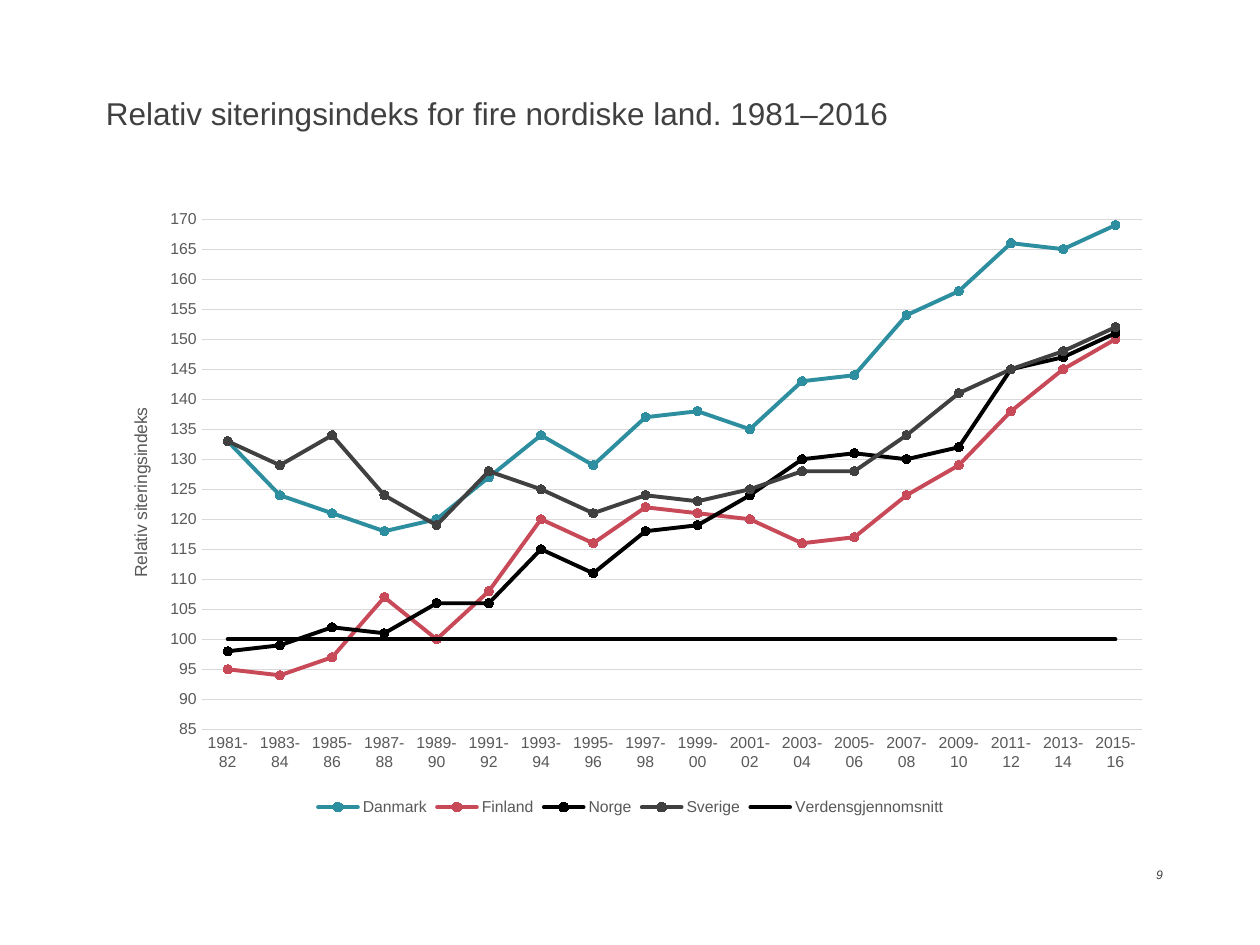
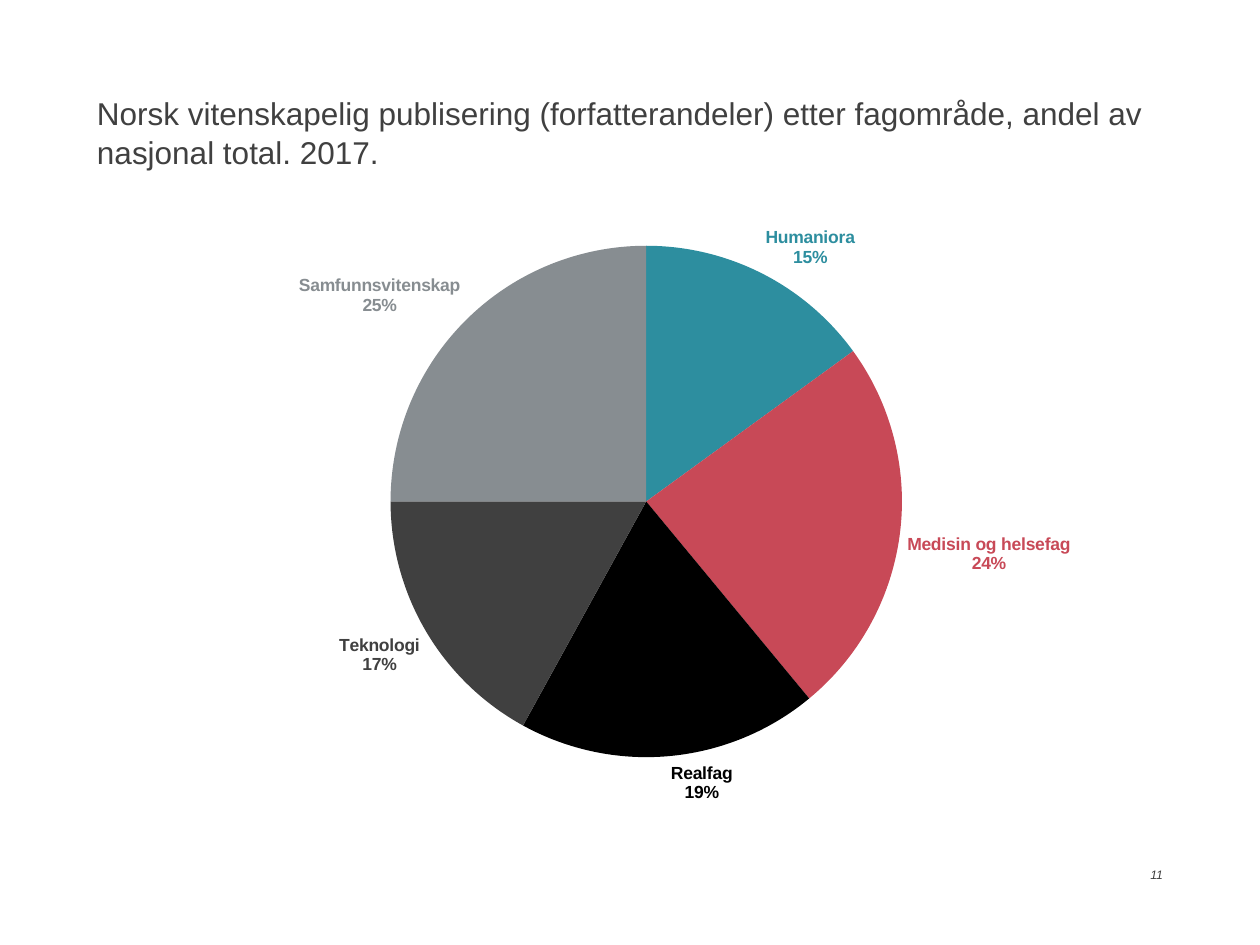
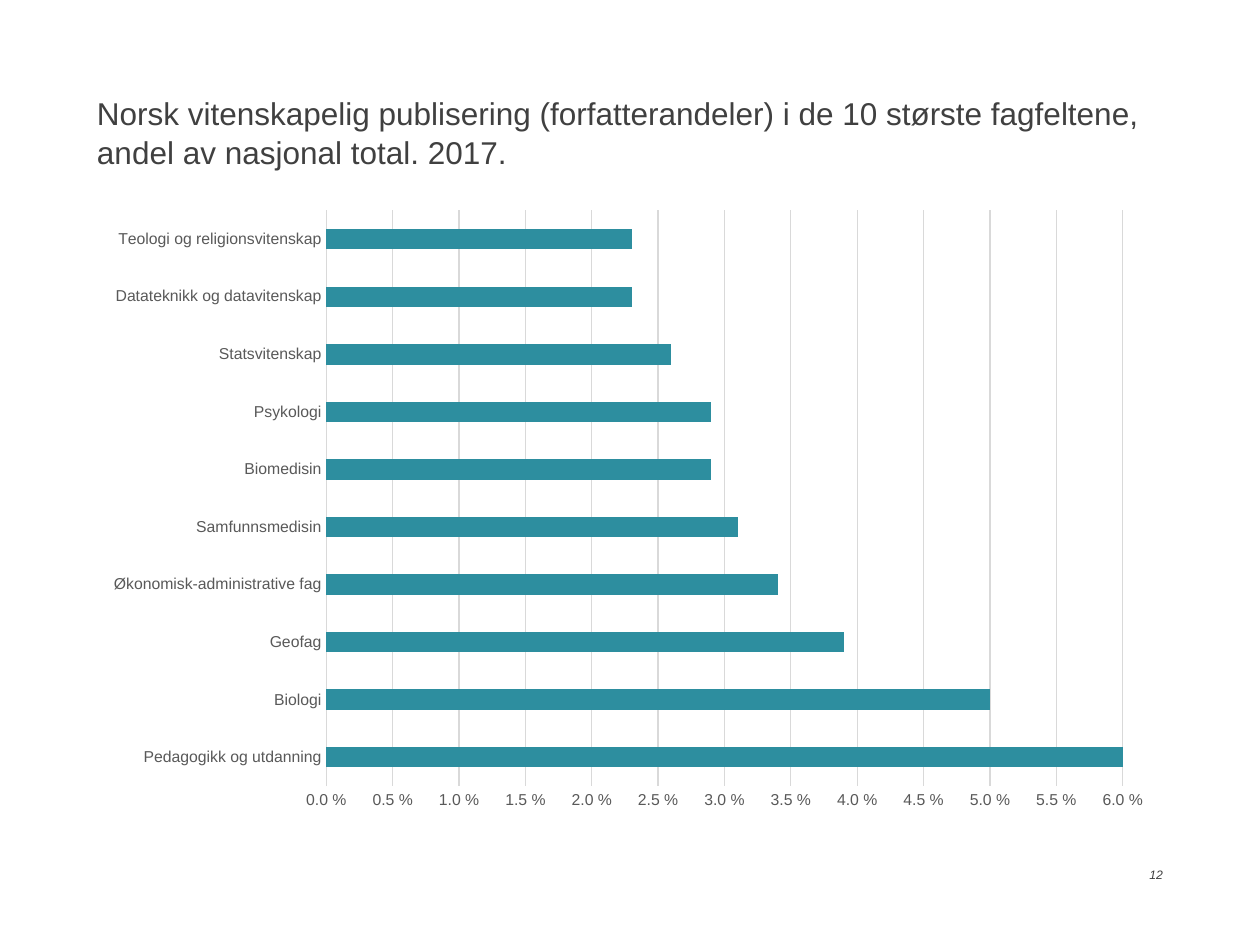
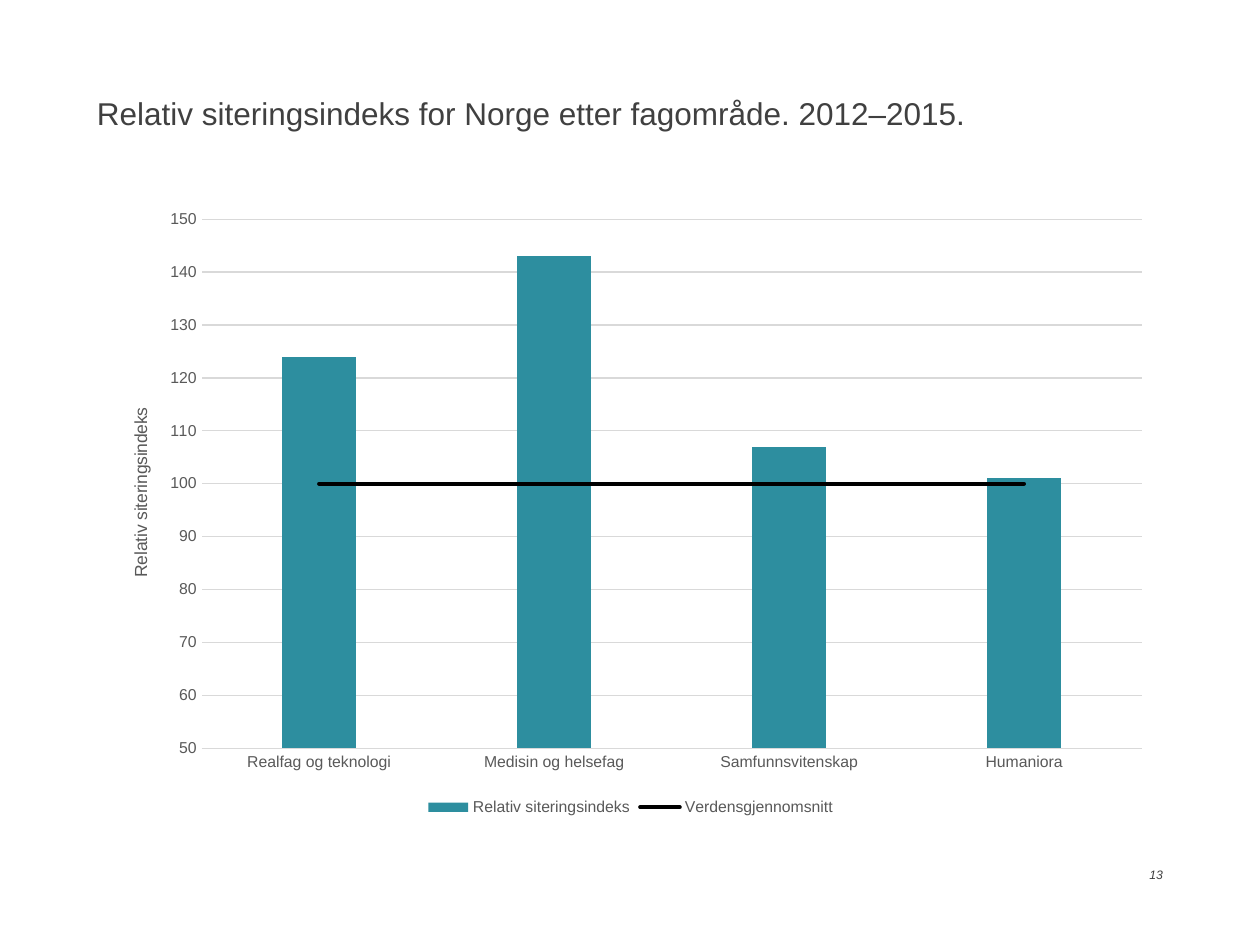
from lxml import etree
from pptx import Presentation
from pptx.chart.data import CategoryChartData
from pptx.dml.color import RGBColor
from pptx.enum import chart as ch, text as tx
from pptx.oxml import ns, xmlchemy as xc
from pptx.util import Inches, Pt

FONT = "Arial"
TEAL, RED, BLACK, DARK, GREY = "2D8E9F", "C84957", "000000", "404040", "878D91"
LABEL, GRID = "595959", "D9D9D9"
FRAME = (0.77, 1.57, 8.47, 4.95)
INDEX = "Relativ siteringsindeks"
WORLD = "Verdensgjennomsnitt"


def rgb(code):
    return RGBColor.from_string(code)


def style(font, size, color, bold=False, italic=False):
    font.name, font.size = FONT, Pt(size)
    font.bold, font.italic = bold, italic
    font.color.rgb = rgb(color)


def child(host, tag, **attrs):
    return etree.SubElement(host, ns.qn(tag), attrs)


def add_text(slide, box, words, size, italic=False):
    shape = slide.shapes.add_textbox(*map(Inches, box))
    frame = shape.text_frame
    frame.word_wrap = True
    frame.margin_left = frame.margin_right = 0
    frame.margin_top = frame.margin_bottom = 0
    para = frame.paragraphs[0]
    para.text = words
    style(para.font, size, DARK, italic=italic)
    return frame


def add_slide(deck, title, number, indent=0):
    slide = deck.slides.add_slide(deck.slide_layouts[6])
    head = add_text(slide, (0.77, 0.73, 8.46, 0.4), title, 18)
    head.margin_left = Inches(indent)
    head.paragraphs[0].line_spacing = 1.05
    foot = add_text(slide, (8.86, 6.88, 0.37, 0.12), str(number), 7, italic=True)
    foot.vertical_anchor = tx.MSO_ANCHOR.MIDDLE
    foot.auto_size = tx.MSO_AUTO_SIZE.SHAPE_TO_FIT_TEXT
    foot.paragraphs[0].alignment = tx.PP_ALIGN.RIGHT
    return slide


def place(host, spot, index):
    """Pin a chart part at slide inches: left, top and, if given, width, height."""
    for old in host.findall(ns.qn("c:layout")):
        host.remove(old)
    layout = xc.OxmlElement("c:layout")
    host.insert(index, layout)
    manual = child(layout, "c:manualLayout")
    sized = len(spot) == 4
    if sized:
        child(manual, "c:layoutTarget", val="inner")
    for axis in "xy":
        child(manual, f"c:{axis}Mode", val="edge")
    left, top, width, height = FRAME
    shares = [(spot[0] - left) / width, (spot[1] - top) / height]
    if sized:
        shares += [spot[2] / width, spot[3] / height]
    for key, share in zip("xywh", shares):
        child(manual, f"c:{key}", val=f"{share:.4f}")


def add_chart(slide, kind, cats, series, plot):
    data = CategoryChartData()
    data.categories = cats
    for name, vals in series:
        data.add_series(name, vals)
    chart = slide.shapes.add_chart(kind, *map(Inches, FRAME), data).chart
    chart.has_title = chart.has_legend = False
    style(chart.font, 10, BLACK)
    place(chart._chartSpace.chart.plotArea, plot, 0)
    return chart


def set_axes(chart, low, high, step, title=None):
    cat, val = chart.category_axis, chart.value_axis
    for axis in (cat, val):
        axis.major_tick_mark = axis.minor_tick_mark = ch.XL_TICK_MARK.NONE
        style(axis.tick_labels.font, 9, LABEL)
    cat.has_major_gridlines = False
    val.has_major_gridlines = True
    for line in (cat.format.line, val.major_gridlines.format.line):
        line.color.rgb, line.width = rgb(GRID), Pt(0.75)
    val.format.line.fill.background()
    val.minimum_scale, val.maximum_scale, val.major_unit = low, high, step
    if title:
        frame = val.axis_title.text_frame
        frame.text = title
        style(frame.paragraphs[0].font, 10, LABEL)
        place(val.axis_title._element, (1, 3.21), 1)


def add_legend(chart):
    chart.has_legend = True
    chart.legend.position = ch.XL_LEGEND_POSITION.BOTTOM
    chart.legend.include_in_layout = False
    style(chart.legend.font, 9, LABEL)


def fill(part, color):
    part.format.fill.solid()
    part.format.fill.fore_color.rgb = rgb(color)


def draw_line(series, color, marked):
    series.smooth = False
    line = series.format.line
    line.color.rgb, line.width = rgb(color), Pt(2.25)
    series._element.find(".//" + ns.qn("a:ln")).set("cap", "rnd")
    marker = series.marker
    marker.style = ch.XL_MARKER_STYLE.CIRCLE if marked else ch.XL_MARKER_STYLE.NONE
    if marked:
        marker.size = 5
        fill(marker, color)
        marker.format.line.color.rgb = rgb(color)


def draw_bars(chart, gap, overlap=0):
    plot = chart.plots[0]
    plot.vary_by_categories = False
    plot.gap_width, plot.overlap = gap, overlap
    fill(plot.series[0], TEAL)


def split_line(chart):
    """Move the last column series to a line plot on the same axes."""
    bars = chart.plots[0]._element
    series = bars.findall(ns.qn("c:ser"))[-1]
    for extra in series.findall(ns.qn("c:invertIfNegative")):
        series.remove(extra)
    lines = xc.OxmlElement("c:lineChart")
    child(lines, "c:grouping", val="standard")
    child(lines, "c:varyColors", val="0")
    lines.append(series)
    child(lines, "c:marker", val="1")
    for axis in bars.findall(ns.qn("c:axId")):
        child(lines, "c:axId", val=axis.get("val"))
    bars.addnext(lines)
    draw_line(chart.plots[1].series[0], BLACK, False)


def label_slice(point, color):
    fill(point, color)
    label = point.data_label
    style(label.font, 10, color, bold=True)
    label.position = ch.XL_LABEL_POSITION.OUTSIDE_END


def show_shares(series):
    labels = series.data_labels
    labels.show_value = False
    labels.show_category_name = labels.show_percentage = True
    labels.number_format, labels.number_format_is_linked = "0%", False
    labels.position = ch.XL_LABEL_POSITION.OUTSIDE_END
    flags = {"c:showVal": "0", "c:showCatName": "1", "c:showPercent": "1"}
    for label in series._element.iter(ns.qn("c:dLbl")):
        for tag, val in flags.items():
            label.find(ns.qn(tag)).set("val", val)
        child(label, "c:separator").text = "\n"


def nordic(deck):
    slide = add_slide(deck, "Relativ siteringsindeks for fire nordiske land. 1981–2016",
                      9, indent=0.07)
    cats = [f"{year}-{(year + 1) % 100:02}" for year in range(1981, 2016, 2)]
    lands = [
        ("Danmark", [133, 124, 121, 118, 120, 127, 134, 129, 137,
                     138, 135, 143, 144, 154, 158, 166, 165, 169]),
        ("Finland", [95, 94, 97, 107, 100, 108, 120, 116, 122,
                     121, 120, 116, 117, 124, 129, 138, 145, 150]),
        ("Norge", [98, 99, 102, 101, 106, 106, 115, 111, 118,
                   119, 124, 130, 131, 130, 132, 145, 147, 151]),
        ("Sverige", [133, 129, 134, 124, 119, 128, 125, 121, 124,
                     123, 125, 128, 128, 134, 141, 145, 148, 152]),
        (WORLD, [100] * len(cats)),
    ]
    chart = add_chart(slide, ch.XL_CHART_TYPE.LINE_MARKERS, cats, lands,
                      (1.6, 1.74, 7.46, 4.05))
    set_axes(chart, 85, 170, 5, INDEX)
    add_legend(chart)
    for series, color in zip(chart.plots[0].series, (TEAL, RED, BLACK, DARK, BLACK)):
        draw_line(series, color, series.name != WORLD)


def areas(deck):
    slide = add_slide(deck, "Norsk vitenskapelig publisering (forfatterandeler) etter "
                      "fagområde, andel av nasjonal total. 2017.", 11)
    cats = ["Humaniora", "Medisin og helsefag", "Realfag", "Teknologi",
            "Samfunnsvitenskap"]
    chart = add_chart(slide, ch.XL_CHART_TYPE.PIE, cats,
                      [("Series 1", [15, 24, 19, 17, 25])], (3.1, 1.95, 4.06, 4.06))
    series = chart.plots[0].series[0]
    for i, color in enumerate((TEAL, RED, BLACK, DARK, GREY)):
        label_slice(series.points[i], color)
    show_shares(series)


def fields(deck):
    slide = add_slide(deck, "Norsk vitenskapelig publisering (forfatterandeler) i de 10 "
                      "største fagfeltene, andel av nasjonal total. 2017.", 12)
    shares = {
        "Pedagogikk og utdanning": 0.06,
        "Biologi": 0.05,
        "Geofag": 0.039,
        "Økonomisk-administrative fag": 0.034,
        "Samfunnsmedisin": 0.031,
        "Biomedisin": 0.029,
        "Psykologi": 0.029,
        "Statsvitenskap": 0.026,
        "Datateknikk og datavitenskap": 0.023,
        "Teologi og religionsvitenskap": 0.023,
    }
    chart = add_chart(slide, ch.XL_CHART_TYPE.BAR_CLUSTERED, list(shares),
                      [("Series 1", list(shares.values()))], (2.59, 1.67, 6.32, 4.57))
    set_axes(chart, 0, 0.06, 0.005)
    ticks = chart.value_axis.tick_labels
    ticks.number_format, ticks.number_format_is_linked = r"0.0\ %", False
    draw_bars(chart, 182)


def norway(deck):
    slide = add_slide(deck, "Relativ siteringsindeks for Norge etter fagområde. "
                      "2012–2015.", 13)
    cats = ["Realfag og teknologi", "Medisin og helsefag", "Samfunnsvitenskap",
            "Humaniora"]
    chart = add_chart(slide, ch.XL_CHART_TYPE.COLUMN_CLUSTERED, cats,
                      [(INDEX, [124, 143, 107, 101]), (WORLD, [100] * 4)],
                      (1.6, 1.74, 7.46, 4.2))
    set_axes(chart, 50, 150, 10, INDEX)
    add_legend(chart)
    draw_bars(chart, 219, -27)
    split_line(chart)


def main():
    deck = Presentation()
    deck.slide_width, deck.slide_height = Inches(10), Inches(7.5)
    for build in (nordic, areas, fields, norway):
        build(deck)
    deck.save("out.pptx")


if __name__ == "__main__":
    main()
